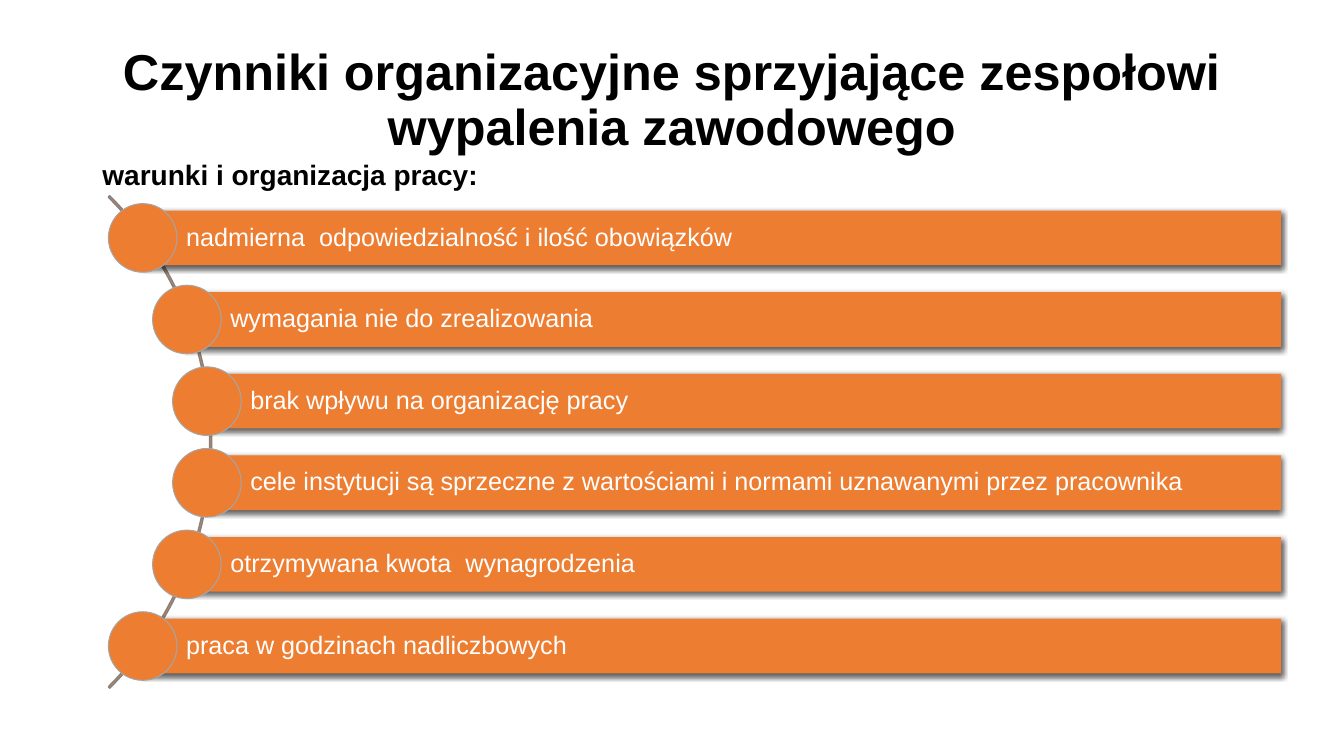
"""Builds the slide on organisational factors that favour burnout."""
from dataclasses import dataclass
from math import sqrt

from lxml.etree import SubElement
from pptx import Presentation
from pptx.dml.color import RGBColor
from pptx.enum.shapes import MSO_SHAPE
from pptx.enum.text import MSO_ANCHOR, MSO_AUTO_SIZE, PP_ALIGN
from pptx.oxml.ns import qn
from pptx.util import Pt


@dataclass(frozen=True)
class Theme:
    font: str = "Arial"
    ink: RGBColor = RGBColor(0, 0, 0)
    light: RGBColor = RGBColor(255, 255, 255)
    accent: RGBColor = RGBColor(0xED, 0x7D, 0x31)
    dot_edge: RGBColor = RGBColor(0xA5, 0xA5, 0xA5)
    arc_edge: RGBColor = RGBColor(0x82, 0x82, 0x82)
    title_size: Pt = Pt(36)
    subtitle_size: Pt = Pt(20)
    factor_size: Pt = Pt(18)


theme = Theme()


def write(frame, text, size, color, bold, align, anchor):
    frame.text = text
    frame.word_wrap = True
    frame.auto_size = MSO_AUTO_SIZE.NONE
    frame.vertical_anchor = anchor
    line = frame.paragraphs[0]
    line.alignment = align
    line.line_spacing = 0.9
    line.space_before = Pt(0)
    font = line.runs[0].font
    font.name, font.size, font.bold = theme.font, size, bold
    font.color.rgb = color


def add_figure(kind, left, top, width, height, edge=None, edge_width=0):
    figure = slide.shapes.add_shape(kind, Pt(left), Pt(top), Pt(width), Pt(height))
    figure.shadow.inherit = False
    figure.fill.solid()
    figure.fill.fore_color.rgb = theme.accent
    if edge is None:
        figure.line.fill.background()
    else:
        figure.line.color.rgb = edge
        figure.line.width = Pt(edge_width)
    return figure


prs = Presentation()
prs.slide_width, prs.slide_height = Pt(960), Pt(540)
slide = prs.slides.add_slide(prs.slide_layouts[1])

title, subtitle = slide.placeholders
title.left, title.top, title.width, title.height = Pt(66), Pt(16), Pt(828), Pt(113)
write(title.text_frame, "Czynniki organizacyjne sprzyjające zespołowi wypalenia zawodowego",
      theme.title_size, theme.ink, True, PP_ALIGN.CENTER, MSO_ANCHOR.MIDDLE)

subtitle.left, subtitle.top, subtitle.width, subtitle.height = Pt(66), Pt(111.6), Pt(828), Pt(34)
write(subtitle.text_frame, "warunki i organizacja pracy:",
      theme.subtitle_size, theme.ink, True, PP_ALIGN.LEFT, MSO_ANCHOR.TOP)
subtitle_format = subtitle.text_frame.paragraphs[0]._p.get_or_add_pPr()
subtitle_format.set("marL", "0")
subtitle_format.set("indent", "0")
SubElement(subtitle_format, qn("a:buNone"))

factors = [
    "nadmierna  odpowiedzialność i ilość obowiązków",
    "wymagania nie do zrealizowania",
    "brak wpływu na organizację pracy",
    "cele instytucji są sprzeczne z wartościami i normami uznawanymi przez pracownika",
    "otrzymywana kwota  wynagrodzenia",
    "praca w godzinach nadliczbowych",
]

center_x, center_y, arc_size = -97.5, 315.7, 497.5
dot_orbit, row_pitch = 247, 58.3
bar_right, bar_height, dot_size = 915.1, 39, 49

arc = add_figure(MSO_SHAPE.BLOCK_ARC, center_x - arc_size / 2, center_y - arc_size / 2,
                 arc_size, arc_size, theme.arc_edge, 1)
for index, setting in enumerate((189, 27, 0.003)):
    arc.adjustments[index] = setting

for row, factor in enumerate(factors):
    offset = (row - (len(factors) - 1) / 2) * row_pitch
    middle = center_y + offset
    bar_left = center_x + sqrt(dot_orbit ** 2 - offset ** 2)

    bar = add_figure(MSO_SHAPE.RECTANGLE, bar_left, middle - bar_height / 2,
                     bar_right - bar_left, bar_height)
    shadow = SubElement(bar._element.spPr.find(qn("a:effectLst")), qn("a:outerShdw"),
                        blurRad=str(Pt(4.5)), dist=str(Pt(1.5)), dir="5400000",
                        algn="ctr", rotWithShape="0")
    shadow_color = SubElement(shadow, qn("a:srgbClr"), val=str(theme.ink))
    SubElement(shadow_color, qn("a:alpha"), val="63000")

    label = bar.text_frame
    label.margin_left = Pt(31)
    label.margin_top = label.margin_right = label.margin_bottom = Pt(4.5)
    write(label, factor, theme.factor_size, theme.light, False, PP_ALIGN.LEFT, MSO_ANCHOR.MIDDLE)

    add_figure(MSO_SHAPE.OVAL, bar_left - dot_size / 2, middle - dot_size / 2,
               dot_size, dot_size, theme.dot_edge, 0.75)

prs.save("out.pptx")
